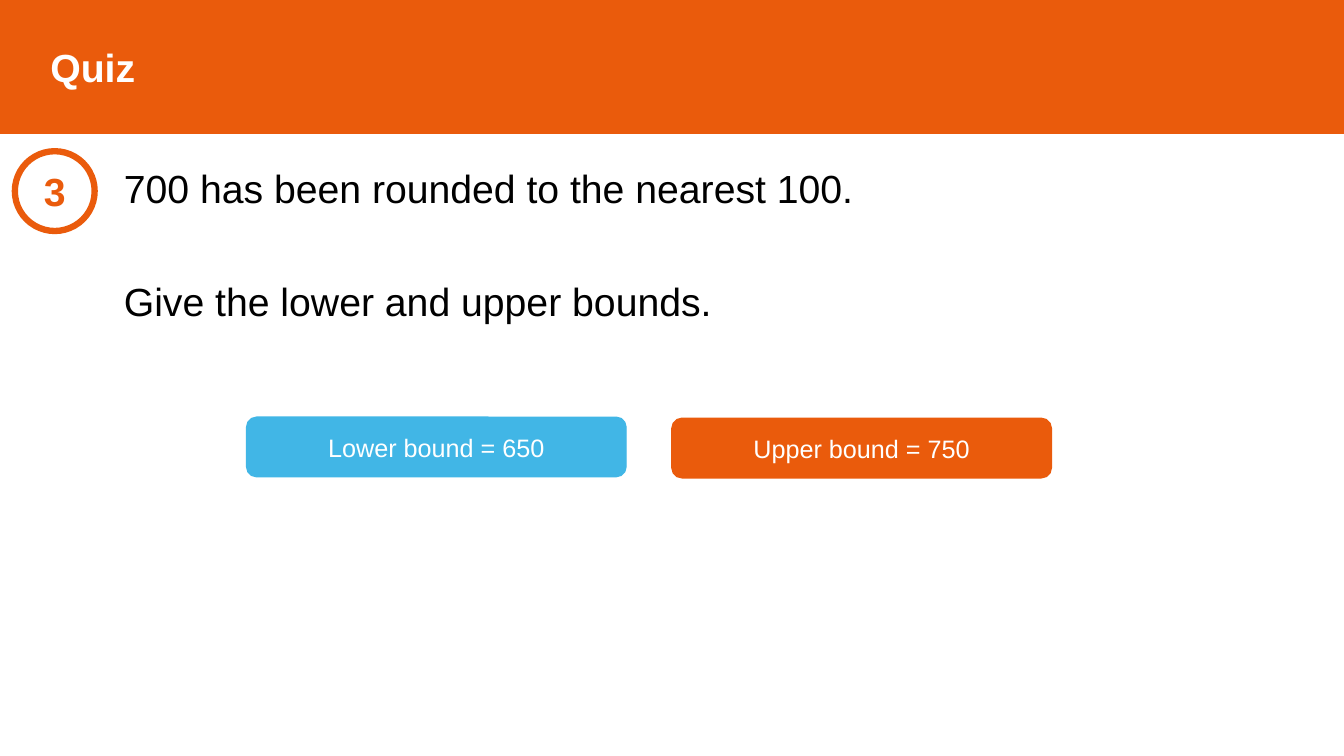
"""Build a quiz slide on lower and upper bounds."""
from pptx import Presentation
from pptx.dml.color import RGBColor
from pptx.enum.shapes import MSO_SHAPE
from pptx.enum.text import MSO_ANCHOR, PP_ALIGN
from pptx.util import Pt

RECT, OVAL, ROUND = MSO_SHAPE.RECTANGLE, MSO_SHAPE.OVAL, MSO_SHAPE.ROUNDED_RECTANGLE
TOP, MIDDLE = MSO_ANCHOR.TOP, MSO_ANCHOR.MIDDLE
LEFT, CENTER = PP_ALIGN.LEFT, PP_ALIGN.CENTER
ORANGE = RGBColor(0xEA, 0x5B, 0x0C)
BLUE = RGBColor(0x41, 0xB6, 0xE6)
WHITE = RGBColor(255, 255, 255)
BLACK = RGBColor(0, 0, 0)

WIDTH, HEIGHT = 960, 540
TITLE = "Quiz"
NUMBER = "3"
QUESTION = ["700 has been rounded to the nearest 100.",
            "Give the lower and upper bounds."]
ANSWERS = [("Lower bound = 650", BLUE), ("Upper bound = 750", ORANGE)]
ANSWER_X, ANSWER_Y, ANSWER_W, ANSWER_H = 176.2, 298, 271, 42.5
STEP_X, STEP_Y = 303.8, 0.8


def write(shape, lines, size=28, color=WHITE, bold=False, align=CENTER,
          anchor=MIDDLE, inset=7.2, space=1.0, gap=0):
    """Fill a shape with lines of formatted text."""
    frame = shape.text_frame
    frame.word_wrap = True
    frame.vertical_anchor = anchor
    frame.margin_left = Pt(inset)
    for i, line in enumerate(lines):
        para = frame.add_paragraph() if i else frame.paragraphs[0]
        para.alignment = align
        para.line_spacing = space
        para.space_before = Pt(gap if i else 0)
        run = para.add_run()
        run.text = line
        font = run.font
        font.name, font.size, font.bold = "Arial", Pt(size), bold
        font.color.rgb = color


def draw(slide, kind, box, fill=None, line=ORANGE, width=1):
    """Add a preset shape without a shadow."""
    shape = slide.shapes.add_shape(kind, *map(Pt, box))
    shape.shadow.inherit = False
    if fill is None:
        shape.fill.background()
    else:
        shape.fill.solid()
        shape.fill.fore_color.rgb = fill
    shape.line.color.rgb = line
    shape.line.width = Pt(width)
    return shape


def main():
    """Lay out the slide and save it."""
    deck = Presentation()
    deck.slide_width, deck.slide_height = Pt(WIDTH), Pt(HEIGHT)
    slide = deck.slides.add_slide(deck.slide_layouts[6])

    body = slide.shapes.add_textbox(Pt(81.4), Pt(117.4), Pt(828), Pt(131))
    write(body, QUESTION, color=BLACK, align=LEFT, anchor=TOP, space=0.9, gap=51)

    band = draw(slide, RECT, (0, 0, WIDTH, 95), ORANGE)
    write(band, [TITLE], bold=True, align=LEFT, inset=36)

    badge = draw(slide, OVAL, (10.6, 108, 57, 57), width=4.5)
    write(badge, [NUMBER], color=ORANGE, bold=True)

    for i, (text, color) in enumerate(ANSWERS):
        box = (ANSWER_X + i * STEP_X, ANSWER_Y + i * STEP_Y, ANSWER_W, ANSWER_H)
        write(draw(slide, ROUND, box, color, color), [text], size=18)

    deck.save("out.pptx")


if __name__ == "__main__":
    main()
